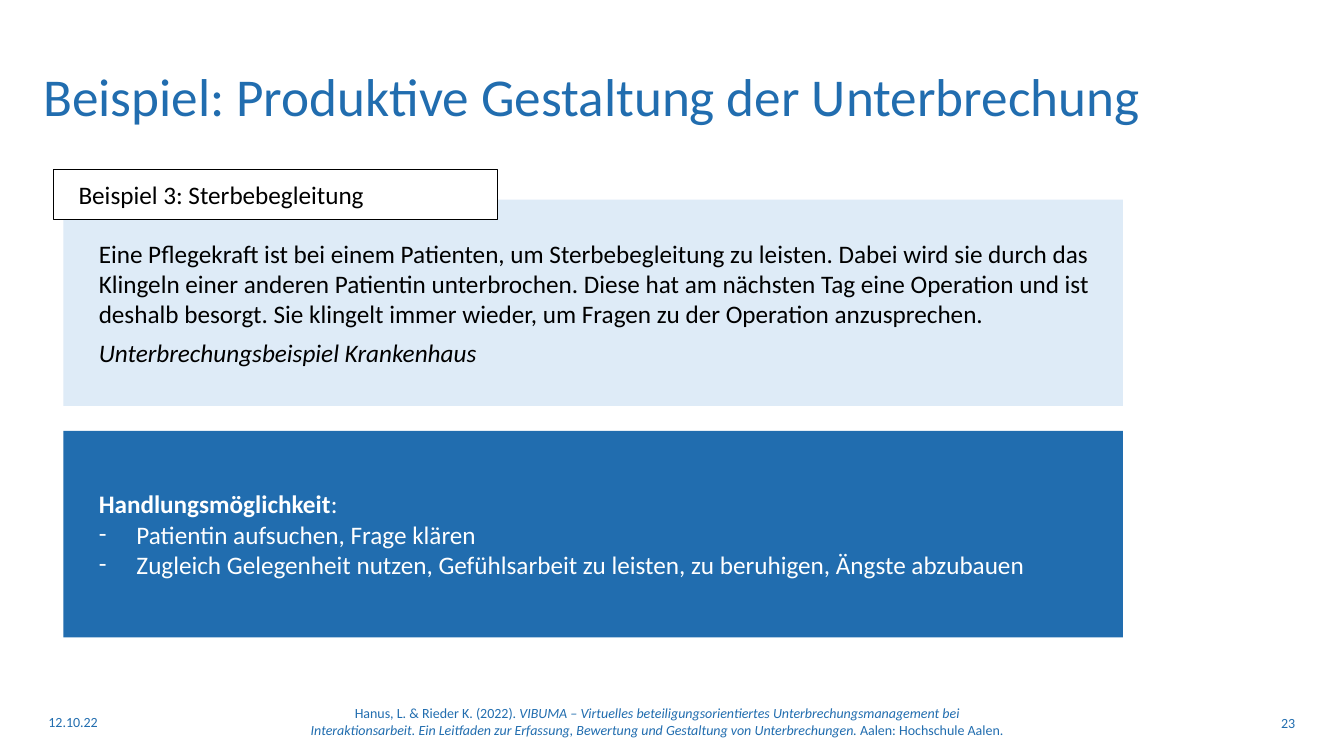
from lxml import etree
from pptx import Presentation
from pptx.dml.color import RGBColor
from pptx.enum.shapes import MSO_SHAPE
from pptx.enum.text import MSO_ANCHOR, PP_ALIGN
from pptx.oxml.ns import qn
from pptx.util import Cm, Pt

RECTANGLE = MSO_SHAPE.RECTANGLE
MIDDLE = MSO_ANCHOR.MIDDLE
LEFT, CENTER, RIGHT = PP_ALIGN.LEFT, PP_ALIGN.CENTER, PP_ALIGN.RIGHT

BLUE, PALE_BLUE, WHITE, BLACK = "216DAF", "DEEBF7", "FFFFFF", "000000"
FONT = "Calibri"

# Content: a paragraph is a list of (text, style) runs
TITLE = [[("Beispiel: Produktive Gestaltung der Unterbrechung", "")]]
LABEL = [[("Beispiel 3: Sterbebegleitung", "")]]
EXAMPLE = [
    [("Eine Pflegekraft ist bei einem Patienten, um Sterbebegleitung zu leisten. "
      "Dabei wird sie durch das Klingeln einer anderen Patientin unterbrochen. "
      "Diese hat am nächsten Tag eine Operation und ist deshalb besorgt. "
      "Sie klingelt immer wieder, um Fragen zu der Operation anzusprechen.", "")],
    [("Unterbrechungsbeispiel Krankenhaus", "italic")],
]
ACTIONS = [
    [("Handlungsmöglichkeit", "bold"), (":", "")],
    [("Patientin aufsuchen, Frage klären", "")],
    [("Zugleich Gelegenheit nutzen, Gefühlsarbeit zu leisten, "
      "zu beruhigen, Ängste abzubauen", "")],
]
CITATION = [[
    ("Hanus, L. & Rieder K. (2022). ", ""),
    ("VIBUMA – Virtuelles beteiligungsorientiertes Unterbrechungsmanagement bei "
     "Interaktionsarbeit. Ein Leitfaden zur Erfassung, Bewertung und Gestaltung "
     "von Unterbrechungen. ", "italic"),
    ("Aalen: Hochschule Aalen.", ""),
]]
DATE = [[("12.10.22", "")]]
PAGE_NUMBER = [[("23", "")]]

# Layout in centimetres
PANEL_LEFT, PANEL_TOP, PANEL_WIDTH, PANEL_HEIGHT = 1.6, 5.03, 26.7, 5.2
PANEL_GAP = 0.63
PANEL_INDENT, BULLET_HANG = 0.64, 0.95
ACTIONS_TOP = PANEL_TOP + PANEL_HEIGHT + PANEL_GAP


def color(hex_code):
    return RGBColor.from_string(hex_code)


def write_text(shape, paragraphs, size=18, font_color=BLACK, align=LEFT,
               indent=0, first_line=0, bullets_from=None, space_before=0,
               line_spacing=None):
    frame = shape.text_frame
    frame.word_wrap = True
    frame.vertical_anchor = MIDDLE
    for number, runs in enumerate(paragraphs):
        paragraph = frame.paragraphs[0] if number == 0 else frame.add_paragraph()
        paragraph.alignment = align
        if line_spacing:
            paragraph.line_spacing = line_spacing
        if number:
            paragraph.space_before = Pt(space_before)
        is_bullet = bullets_from is not None and number >= bullets_from
        hang = BULLET_HANG if is_bullet else 0
        properties = paragraph._p.get_or_add_pPr()
        properties.set("marL", str(Cm(indent + hang)))
        properties.set("indent", str(Cm(first_line - hang)))
        if is_bullet:
            etree.SubElement(properties, qn("a:buFont")).set("typeface", FONT)
            etree.SubElement(properties, qn("a:buChar")).set("char", "-")
        for text, style in runs:
            run = paragraph.add_run()
            run.text = text
            run.font.name = FONT
            run.font.size = Pt(size)
            run.font.color.rgb = color(font_color)
            run.font.bold = style == "bold"
            run.font.italic = style == "italic"


def add_text(slide, box, paragraphs, **text_format):
    shape = slide.shapes.add_textbox(*map(Cm, box))
    write_text(shape, paragraphs, **text_format)


def add_panel(slide, box, fill, paragraphs, line=None, **text_format):
    shape = slide.shapes.add_shape(RECTANGLE, *map(Cm, box))
    shape.shadow.inherit = False
    shape.fill.solid()
    shape.fill.fore_color.rgb = color(fill)
    if line:
        shape.line.color.rgb = color(line)
        shape.line.width = Pt(0.75)
    else:
        shape.line.fill.background()
    write_text(shape, paragraphs, **text_format)


def main():
    presentation = Presentation()
    presentation.slide_width, presentation.slide_height = Cm(33.87), Cm(19.05)
    slide = presentation.slides.add_slide(presentation.slide_layouts[6])

    # Title
    add_text(slide, (0.84, 1.47, 29.21, 2.08), TITLE, size=38,
             font_color=BLUE, line_spacing=0.9)

    # Example and actions, then the label overlapping the example
    add_panel(slide, (PANEL_LEFT, PANEL_TOP, PANEL_WIDTH, PANEL_HEIGHT),
              PALE_BLUE, EXAMPLE, indent=PANEL_INDENT, space_before=6)
    add_panel(slide, (PANEL_LEFT, ACTIONS_TOP, PANEL_WIDTH, PANEL_HEIGHT),
              BLUE, ACTIONS, font_color=WHITE, indent=PANEL_INDENT, bullets_from=1)
    add_panel(slide, (1.35, 4.27, 11.2, 1.27), WHITE, LABEL, line=BLACK,
              indent=0.51, first_line=-0.13)

    # Footer
    footer = {"size": 10, "font_color": BLUE}
    add_text(slide, (0.97, 17.68, 5.99, 1.02), DATE, **footer)
    add_text(slide, (7.34, 17.75, 18.44, 0.84), CITATION, align=CENTER, **footer)
    add_text(slide, (26.01, 17.7, 6.88, 1.02), PAGE_NUMBER, align=RIGHT, **footer)

    presentation.save("out.pptx")


if __name__ == "__main__":
    main()
